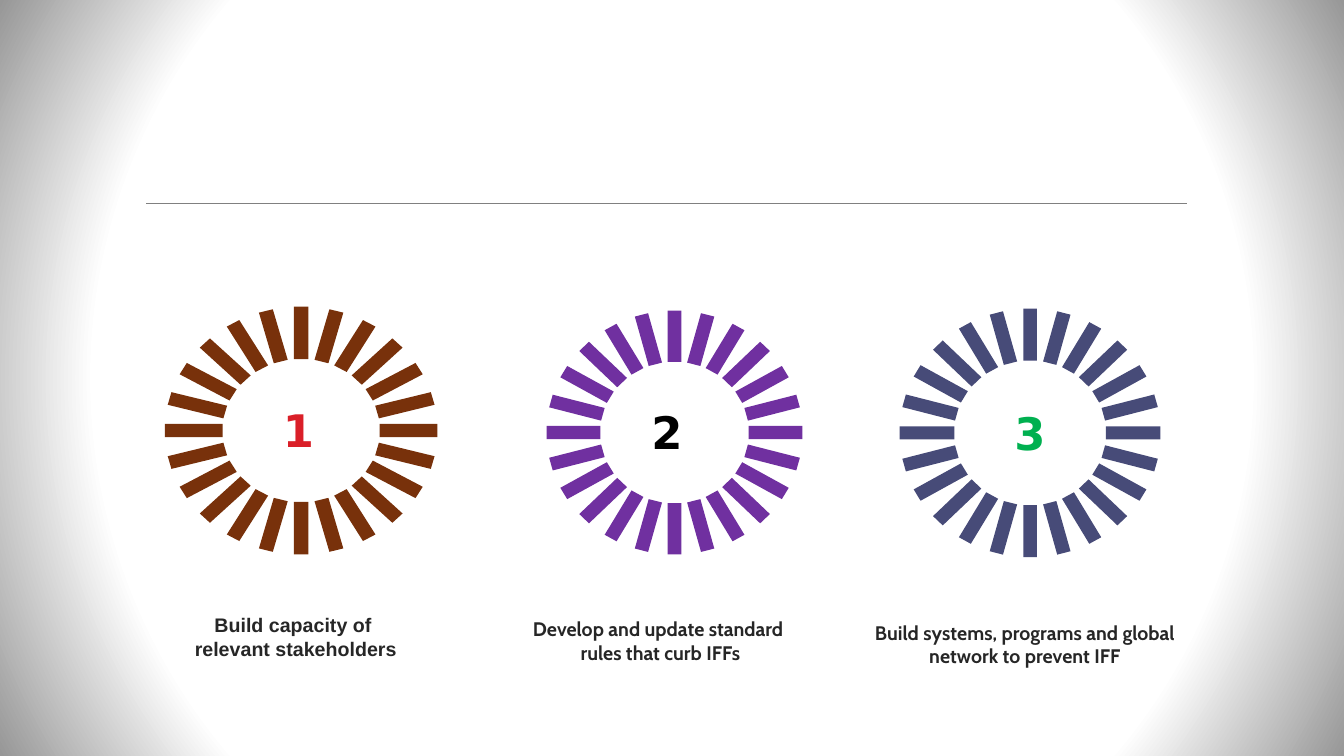
import math

from lxml import etree
from pptx import Presentation
from pptx import util as u
from pptx.dml.color import RGBColor
from pptx.enum import shapes, text
from pptx.oxml.ns import qn

COLORS = {
    "white": "FFFFFF", "edge": "979797", "rule": "808080", "body": "262626",
    "brown": "78310B", "purple": "7030A0", "navy": "474B78",
    "red": "DA1F28", "black": "000000", "green": "00B050",
}
BARS = 24
HALF_BAR = 0.165


def rgb(name):
    return RGBColor.from_string(COLORS[name])


class SlideBuilder:
    def __init__(self, slide):
        self.slide = slide

    def background(self):
        fill = self.slide.background.fill
        fill.gradient()
        for stop, position, color in zip(fill.gradient_stops, (0.75, 1), ("white", "edge")):
            stop.position = position
            stop.color.rgb = rgb(color)
        # A radial fade needs a:path in place of a:lin
        grad = next(self.slide.element.iter(qn("a:gradFill")))
        grad.remove(grad.find(qn("a:lin")))
        radial = etree.SubElement(grad, qn("a:path"), {"path": "circle"})
        etree.SubElement(radial, qn("a:fillToRect"), dict.fromkeys("ltrb", "50000"))

    def rule(self, x1, x2, y):
        line = self.slide.shapes.add_connector(
            shapes.MSO_CONNECTOR.STRAIGHT, u.Cm(x1), u.Cm(y), u.Cm(x2), u.Cm(y))
        line.line.color.rgb = rgb("rule")
        line.line.width = u.Pt(1.25)
        etree.SubElement(line._element.spPr, qn("a:effectLst"))

    def ring(self, cx, cy, outer, inner, stretch, color):
        """Radial bars around a circle that is stretched sideways."""
        group = self.slide.shapes.add_group_shape()
        for i in range(BARS):
            angle = 2 * math.pi * i / BARS
            sin, cos = math.sin(angle), math.cos(angle)
            corners = [
                (u.Cm(cx + stretch * (radius * sin + side * cos)),
                 u.Cm(cy - radius * cos + side * sin))
                for radius, side in ((inner, HALF_BAR), (inner, -HALF_BAR),
                                     (outer, -HALF_BAR), (outer, HALF_BAR))]
            if i % (BARS // 4) == 0:
                xs, ys = zip(*corners)
                sp = group.shapes.add_shape(
                    shapes.MSO_SHAPE.RECTANGLE, min(xs), min(ys),
                    max(xs) - min(xs), max(ys) - min(ys))
            else:
                outline = group.shapes.build_freeform(*corners[0])
                outline.add_line_segments(corners[1:], close=True)
                sp = outline.convert_to_shape()
            sp.shadow.inherit = False
            sp.fill.solid()
            sp.fill.fore_color.rgb = rgb(color)
            sp.line.fill.background()

    def label(self, box, lines, size, font, color, wrap=True):
        sp = self.slide.shapes.add_textbox(*(u.Cm(v) for v in box))
        tf = sp.text_frame
        tf.word_wrap = wrap
        tf.auto_size = text.MSO_AUTO_SIZE.SHAPE_TO_FIT_TEXT
        for i, line in enumerate(lines):
            p = tf.add_paragraph() if i else tf.paragraphs[0]
            p.alignment = text.PP_ALIGN.CENTER
            r = p.add_run()
            r.text = line
            r.font.size = u.Pt(size)
            r.font.name = font
            r.font.bold = True
            r.font.color.rgb = rgb(color)


def main():
    prs = Presentation()
    prs.slide_width, prs.slide_height = u.Cm(33.87), u.Cm(19.05)
    builder = SlideBuilder(prs.slides.add_slide(prs.slide_layouts[6]))
    builder.background()

    # Rings: centre, outer and inner radius, stretch, colour
    builder.ring(7.59, 10.85, 3.12, 1.80, 1.10, "brown")
    builder.ring(17.00, 10.90, 3.07, 1.78, 1.05, "purple")
    builder.ring(25.96, 10.91, 3.13, 1.82, 1.05, "navy")

    # Line under the title area
    builder.rule(3.68, 29.92, 5.13)

    # Numbers inside the rings
    numbers = [("1", 6.81, 10.03, 1.42, "red"),
               ("2", 16.15, 10.08, 1.32, "black"),
               ("3", 25.30, 10.11, 1.32, "green")]
    for digit, x, y, width, color in numbers:
        builder.label((x, y, width, 1.63), [digit], 32, "DejaVu Sans", color, wrap=False)

    # Captions below the rings
    captions = [
        ((4.65, 15.32, 5.61, 1.45), "Arial", False,
         ["Build capacity of ", "relevant stakeholders"]),
        ((11.91, 15.42, 9.47, 1.45), "Cabin", True,
         ["Develop and update standard ", "rules that curb IFFs"]),
        ((20.93, 15.52, 9.80, 1.45), "Cabin", True,
         ["Build systems, programs and global network to prevent IFF"]),
    ]
    for box, font, wrap, lines in captions:
        builder.label(box, lines, 14, font, "body", wrap)

    prs.save("out.pptx")


if __name__ == "__main__":
    main()
